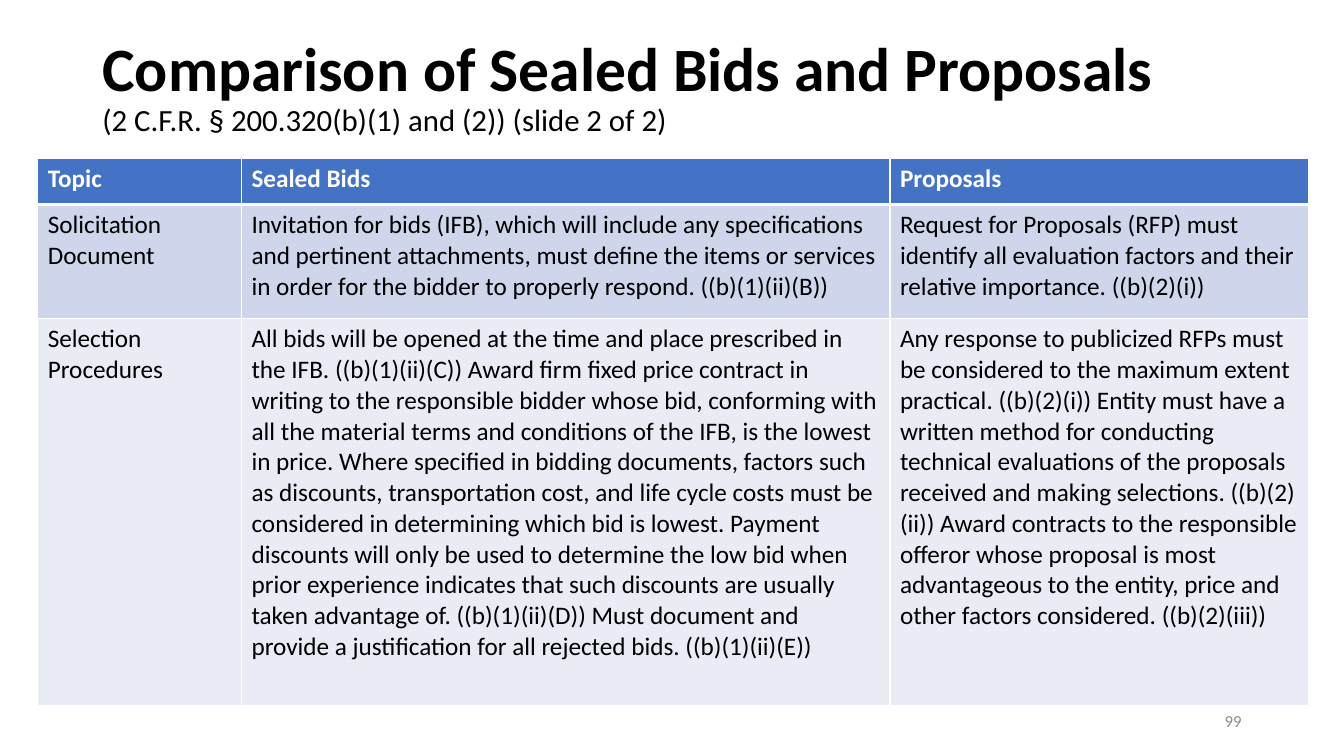
import pptx
import pptx.util
import pptx.dml.color
import pptx.enum.text
import pptx.oxml
import pptx.oxml.ns

HUES = {
    "ink": "000000", "paper": "FFFFFF", "head": "4472C4",
    "dark": "CFD5EA", "light": "E9EBF5", "grey": "8C8C8C",
}
COLS, ROWS = 160, 90  # grid over a 13.33 by 7.5 inch slide
FONT = "Calibri"
ALIGN = pptx.enum.text.PP_ALIGN


class Deck:
    def __init__(self):
        self.prs = pptx.Presentation()
        self.prs.slide_width = pptx.util.Inches(13.33)
        self.prs.slide_height = pptx.util.Inches(7.5)
        self.slide = self.prs.slides.add_slide(self.prs.slide_layouts[6])

    def wide(self, cols):
        return round(self.prs.slide_width * cols / COLS)

    def high(self, rows):
        return round(self.prs.slide_height * rows / ROWS)

    def place(self, left, top, width, height):
        return self.wide(left), self.high(top), self.wide(width), self.high(height)

    def hue(self, name):
        return pptx.dml.color.RGBColor.from_string(HUES[name])

    def style(self, run, size, hue, bold=False):
        run.font.name = FONT
        run.font.size = pptx.util.Pt(size)
        run.font.bold = bold
        run.font.color.rgb = self.hue(hue)

    def text(self, box, words, looks, align=ALIGN.LEFT, space=1.0):
        """Add a text box; looks gives size, hue and bold for each line."""
        frame = self.slide.shapes.add_textbox(*self.place(*box)).text_frame
        frame.word_wrap = True
        frame.vertical_anchor = pptx.enum.text.MSO_ANCHOR.MIDDLE
        frame.text = words
        para = frame.paragraphs[0]
        para.alignment = align
        para.line_spacing = space
        for run, look in zip(para.runs, looks):
            self.style(run, *look)

    def edge(self, cell, sides):
        """Draw white borders; sides maps L, R, T and B to points."""
        props = cell._tc.get_or_add_tcPr()
        for spot, (side, width) in enumerate(sides.items()):
            props.insert(spot, pptx.oxml.parse_xml(
                f'<a:ln{side} {pptx.oxml.ns.nsdecls("a")} w="{pptx.util.Pt(width)}">'
                f'<a:solidFill><a:srgbClr val="{HUES["paper"]}"/></a:solidFill>'
                f'</a:ln{side}>'))

    def table(self, left, top, widths, heights, data, fills):
        box = self.place(left, top, sum(widths), sum(heights))
        grid = self.slide.shapes.add_table(len(heights), len(widths), *box).table
        for col, width in zip(grid.columns, widths):
            col.width = self.wide(width)
        for row, height in zip(grid.rows, heights):
            row.height = self.high(height)
        for r, (line, fill) in enumerate(zip(data, fills)):
            for c, words in enumerate(line):
                cell = grid.cell(r, c)
                cell.text_frame.text = words
                run = cell.text_frame.paragraphs[0].runs[0]
                self.style(run, 18, "ink" if r else "paper", r == 0)
                cell.fill.solid()
                cell.fill.fore_color.rgb = self.hue(fill)
                self.edge(cell, {"L": 1, "R": 1, "T": 3 if r == 1 else 1,
                                 "B": 1 if r else 3})


DATA = [
    ["Topic", "Sealed Bids", "Proposals"],
    [
        "Solicitation Document",
        "Invitation for bids (IFB), which will include any specifications and "
        "pertinent attachments, must define the items or services in order for "
        "the bidder to properly respond. ((b)(1)(ii)(B))",
        "Request for Proposals (RFP) must identify all evaluation factors and "
        "their relative importance. ((b)(2)(i))",
    ],
    [
        "Selection Procedures",
        "All bids will be opened at the time and place prescribed in the IFB. "
        "((b)(1)(ii)(C)) Award firm fixed price contract in writing to the "
        "responsible bidder whose bid, conforming with all the material terms "
        "and conditions of the IFB, is the lowest in price. Where specified in "
        "bidding documents, factors such as discounts, transportation cost, and "
        "life cycle costs must be considered in determining which bid is lowest. "
        "Payment discounts will only be used to determine the low bid when prior "
        "experience indicates that such discounts are usually taken advantage of. "
        "((b)(1)(ii)(D)) Must document and provide a justification for all "
        "rejected bids. ((b)(1)(ii)(E))",
        "Any response to publicized RFPs must be considered to the maximum extent "
        "practical. ((b)(2)(i)) Entity must have a written method for conducting "
        "technical evaluations of the proposals received and making selections. "
        "((b)(2)(ii)) Award contracts to the responsible offeror whose proposal "
        "is most advantageous to the entity, price and other factors considered. "
        "((b)(2)(iii))",
    ],
]


def main():
    deck = Deck()

    # Title with its citation line
    deck.text((11, 1.8, 138, 17.4),
              "Comparison of Sealed Bids and Proposals\v"
              "(2 C.F.R. § 200.320(b)(1) and (2)) (slide 2 of 2)",
              [(44, "ink", True), (22, "ink")], space=0.9)

    # Comparison table
    deck.table(4.5, 18.85, [24.25, 77.2, 49.8], [5.5, 13.6, 46.1],
               DATA, ["head", "dark", "light"])

    # Page number
    deck.text((113, 83.4, 36, 4.8), "99", [(12, "grey")], ALIGN.RIGHT)

    deck.prs.save("out.pptx")


if __name__ == "__main__":
    main()
